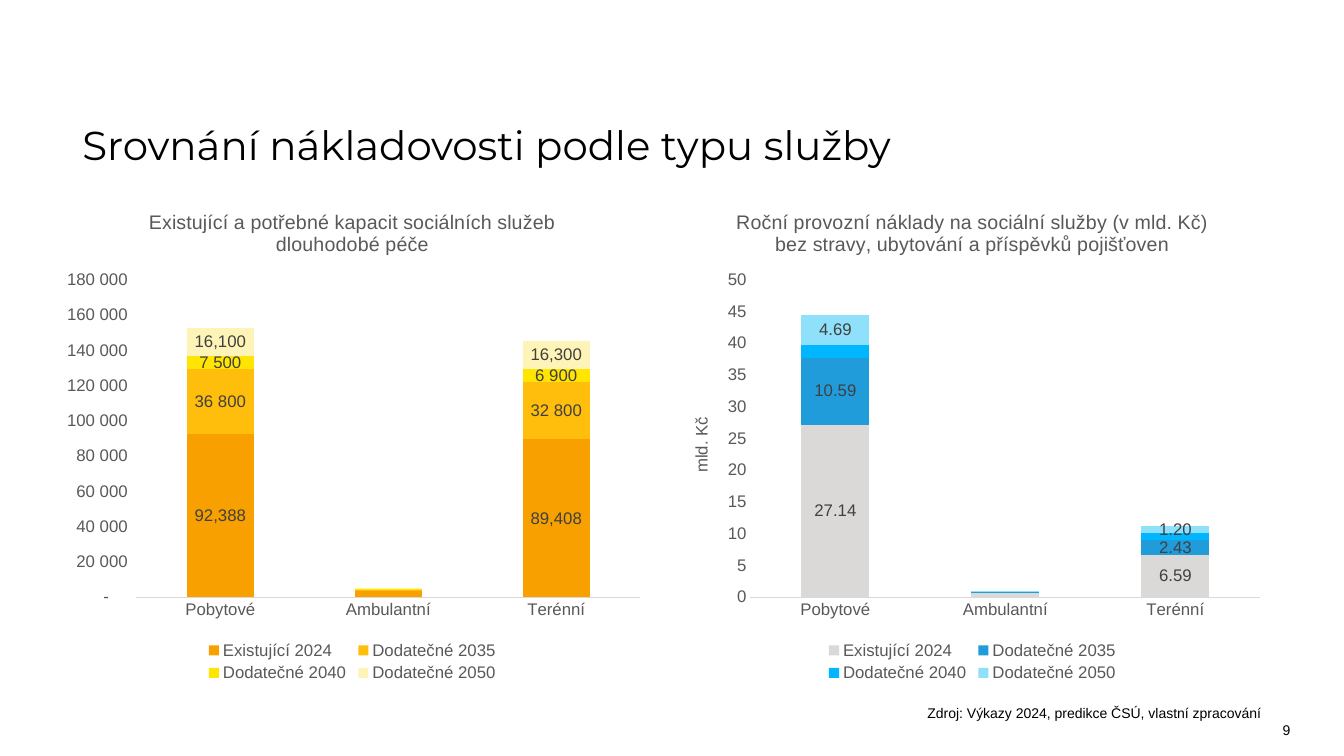
from dataclasses import dataclass
from typing import Any

from lxml import etree
from pptx import Presentation
from pptx.chart.data import CategoryChartData as Data
from pptx.dml.color import RGBColor
from pptx.enum.chart import XL_CHART_TYPE as Kind
from pptx.enum.chart import XL_LABEL_POSITION as Spot
from pptx.enum.chart import XL_LEGEND_POSITION as Side
from pptx.enum.chart import XL_TICK_MARK as Tick
from pptx.enum.text import MSO_ANCHOR as Anchor
from pptx.enum.text import PP_ALIGN as Align
from pptx.oxml import parse_xml
from pptx.oxml.ns import nsdecls, qn
from pptx.util import Inches, Pt

SPACED = r'_-* #\ ##0_-;\-* #\ ##0_-;_-* "-"??_-;_-@_-'
COMMA = "#,##0"
CENTS = "0.00"
TYPES = ("Pobytové", "Ambulantní", "Terénní")
GRAY = "595959"


@dataclass
class Label:
    text: str
    box: tuple[float, float, float, float]
    size: float
    face: str = "Arial"
    align: Align = Align.LEFT
    anchor: Anchor = Anchor.TOP
    lead: float = 1.0


@dataclass
class Series:
    name: str
    vals: tuple[float, ...]
    color: str
    form: str = ""


@dataclass
class Panel:
    left: float
    title: str
    form: str
    top: float
    step: float
    plot: tuple[float, float, float, float]
    series: list[Series]
    unit: str = ""


LABELS = [
    Label("9", (12.19, 7.08, 1.14, 0.32), 10, align=Align.CENTER, anchor=Anchor.MIDDLE),
    Label("Srovnání nákladovosti podle typu služby", (0.72, 1.18, 10.33, 0.57), 28.8,
          "Montserrat", anchor=Anchor.MIDDLE, lead=0.9),
    Label("Zdroj: Výkazy 2024, predikce ČSÚ, vlastní zpracování", (9.1, 6.94, 3.67, 0.27), 10),
]

PANELS = [
    Panel(6.67, "Roční provozní náklady na sociální služby (v mld. Kč) "
          "bez stravy, ubytování a příspěvků pojišťoven",
          "0", 50, 5, (0.13, 0.18, 0.85, 0.64), [
              Series("Existující 2024", (27.14, 0.67, 6.59), "DAD9D7", CENTS),
              Series("Dodatečné 2035", (10.59, 0.22, 2.43), "219CDB", CENTS),
              Series("Dodatečné 2040", (2, 0, 1), "00B7FF"),
              Series("Dodatečné 2050", (4.69, 0.12, 1.2), "8FE0FA", CENTS),
          ], "mld. Kč"),
    Panel(0.52, "Existující a potřebné kapacit sociálních služeb dlouhodobé péče",
          SPACED, 180000, 20000, (0.14, 0.18, 0.84, 0.64), [
              Series("Existující 2024", (92388, 3341, 89408), "F7A000", COMMA),
              Series("Dodatečné 2035", (36800, 1100, 32800), "FFBE0B", SPACED),
              Series("Dodatečné 2040", (7500, 300, 6900), "FFE500", SPACED),
              Series("Dodatečné 2050", (16100, 600, 16300), "FFF4B7", COMMA),
          ]),
]


def rgb(code: str) -> RGBColor:
    return RGBColor.from_string(code)


def style(font: Any, size: float, color: str, face: str = "Arial") -> None:
    font.size = Pt(size)
    font.name = face
    font.bold = False
    font.color.rgb = rgb(color)


def write(slide: Any, label: Label) -> None:
    frame = slide.shapes.add_textbox(*map(Inches, label.box)).text_frame
    frame.word_wrap = True
    frame.vertical_anchor = label.anchor
    para = frame.paragraphs[0]
    para.text = label.text
    para.alignment = label.align
    para.line_spacing = label.lead
    style(para.font, label.size, "000000", label.face)


def place(part: Any, box: tuple[float, ...], after: str, inner: bool = False) -> None:
    for old in part.findall(qn("c:layout")):
        part.remove(old)
    layout = parse_xml(f"<c:layout {nsdecls('c')}><c:manualLayout/></c:layout>")
    rules = [("layoutTarget", "inner")] if inner else []
    rules += [("xMode", "edge"), ("yMode", "edge"), *zip("xywh", box)]
    for name, val in rules:
        etree.SubElement(layout[0], qn(f"c:{name}")).set("val", str(val))
    if after:
        part.find(qn(after)).addnext(layout)
    else:
        part.insert(0, layout)


def head(owner: Any, text: str, size: float) -> None:
    para = owner.text_frame.paragraphs[0]
    para.text = text
    style(para.font, size, GRAY)


def tag(bars: Any, form: str) -> None:
    labels = bars.data_labels
    labels.show_value = True
    labels.position = Spot.CENTER
    labels.number_format = form
    labels.number_format_is_linked = False
    style(labels.font, 12, "404040")
    bars._element.find(qn("c:dLbls")).insert(0, parse_xml(
        f'<c:dLbl {nsdecls("c")}><c:idx val="1"/><c:delete val="1"/></c:dLbl>'))


def draw(slide: Any, panel: Panel) -> None:
    data = Data()
    data.categories = TYPES
    for item in panel.series:
        data.add_series(item.name, item.vals)
    box = map(Inches, (panel.left, 1.89, 5.95, 4.92))
    chart = slide.shapes.add_chart(Kind.COLUMN_STACKED, *box, data).chart
    style(chart.font, 12, "000000")
    chart.has_title = True
    head(chart.chart_title, panel.title, 14)
    chart.chart_title.include_in_layout = False

    bars = chart.plots[0]
    bars.gap_width = 150
    bars.overlap = 100
    bars.vary_by_categories = False
    for item, group in zip(panel.series, bars.series):
        group.format.fill.solid()
        group.format.fill.fore_color.rgb = rgb(item.color)
        if item.form:
            tag(group, item.form)

    cats, vals = chart.category_axis, chart.value_axis
    for axis in (cats, vals):
        axis.major_tick_mark = axis.minor_tick_mark = Tick.NONE
        axis.has_major_gridlines = False
        style(axis.tick_labels.font, 12, GRAY)
    cats.format.line.color.rgb = rgb("D9D9D9")
    cats.format.line.width = Pt(0.75)
    vals.format.line.fill.background()
    vals.minimum_scale, vals.maximum_scale, vals.major_unit = 0, panel.top, panel.step
    vals.tick_labels.number_format = panel.form
    vals.tick_labels.number_format_is_linked = False
    if panel.unit:
        head(vals.axis_title, panel.unit, 12)

    chart.has_legend = True
    chart.legend.position = Side.BOTTOM
    chart.legend.include_in_layout = False
    style(chart.legend.font, 12, GRAY)
    place(chart.legend._element, (0.25, 0.9, 0.5, 0.1), "c:legendPos")
    place(bars._element.getparent(), panel.plot, "", True)


def main() -> None:
    deck = Presentation()
    deck.slide_width, deck.slide_height = Inches(13.33), Inches(7.5)
    slide = deck.slides.add_slide(deck.slide_layouts[6])
    for panel in PANELS:
        draw(slide, panel)
    for label in LABELS:
        write(slide, label)
    deck.save("out.pptx")


if __name__ == "__main__":
    main()
